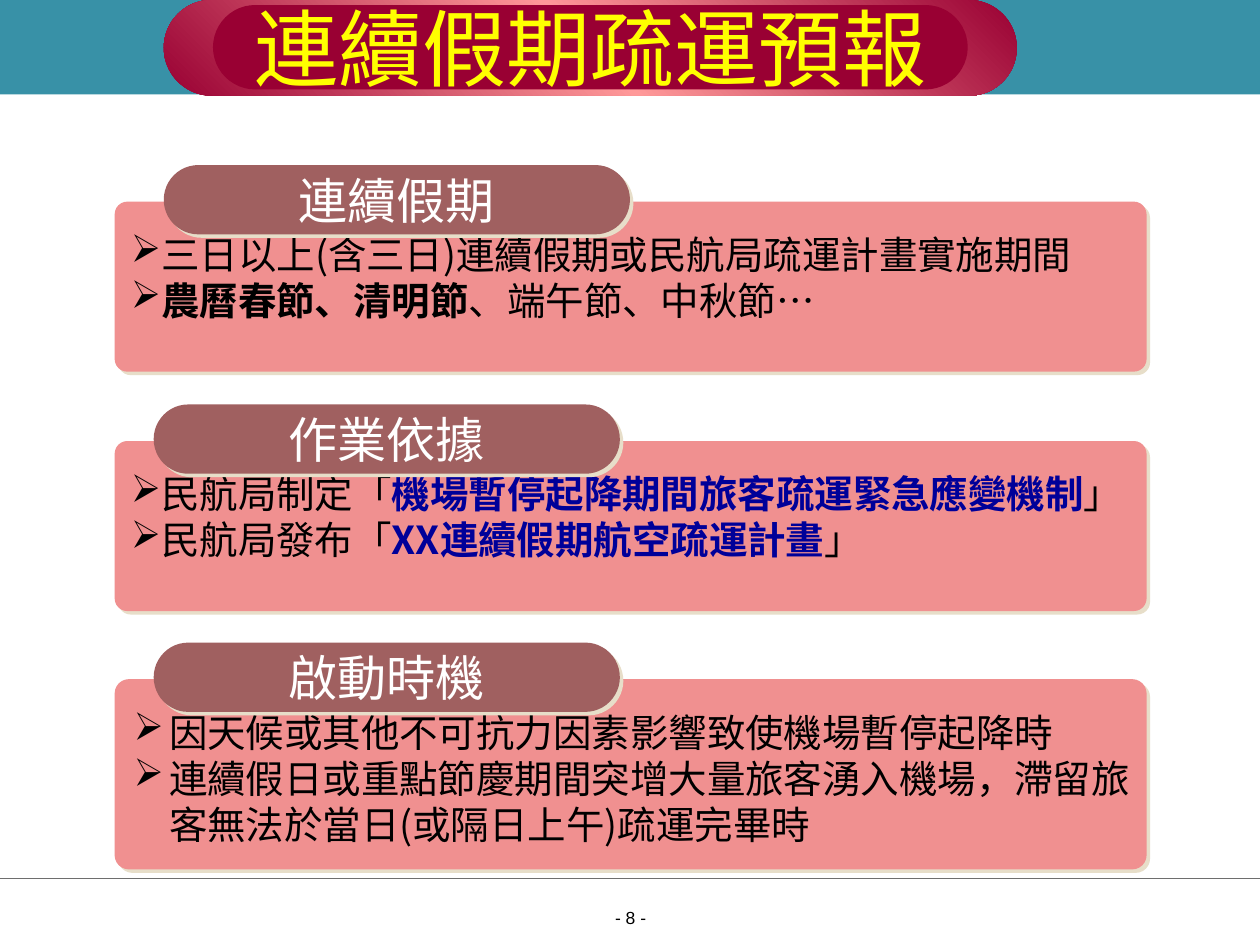
import pptx
import pptx.dml.color
import pptx.enum.shapes
import pptx.enum.text
import pptx.oxml
import pptx.oxml.ns
import pptx.util
from pptx.util import Inches

RGBColor = pptx.dml.color.RGBColor
TEAL = RGBColor(0x38, 0x91, 0xA7)
GREY = RGBColor(0x6E, 0x6E, 0x6E)
PINK = RGBColor(0xF0, 0x90, 0x90)
ROSE = RGBColor(0xA0, 0x60, 0x60)
CRIMSON = RGBColor(0x99, 0x00, 0x33)
SALMON = RGBColor(0xFF, 0x99, 0x99)
BEIGE = RGBColor(0xE7, 0xDE, 0xC9)
YELLOW = RGBColor(0xFF, 0xFF, 0x00)
NAVY = RGBColor(0x00, 0x00, 0x99)
BLACK = RGBColor(0x00, 0x00, 0x00)
WHITE = RGBColor(0xFF, 0xFF, 0xFF)

CJK = "Noto Sans CJK SC"
SHAPE = pptx.enum.shapes.MSO_SHAPE
ALIGN = pptx.enum.text.PP_ALIGN
ANCHOR = pptx.enum.text.MSO_ANCHOR
NAMESPACE = pptx.oxml.ns.nsdecls("a")

# Each section: label, label left, label font, top, height, hanging, paragraphs;
# a paragraph is a list of (text, bold, colour).
SECTIONS = [
    ("連續假期", 1.3, "Arial", 1.6, 1.35, False, [
        [("三日以上(含三日)連續假期或民航局疏運計畫實施期間", False, BLACK)],
        [("農曆春節、清明節", True, BLACK), ("、端午節、中秋節…", False, BLACK)],
    ]),
    ("作業依據", 1.22, "Arial", 3.5, 1.35, False, [
        [("民航局制定「", False, BLACK),
         ("機場暫停起降期間旅客疏運緊急應變機制", True, NAVY),
         ("」", False, BLACK)],
        [("民航局發布「", False, BLACK),
         ("XX連續假期航空疏運計畫", True, NAVY),
         ("」", False, BLACK)],
    ]),
    ("啟動時機", 1.22, CJK, 5.39, 1.51, True, [
        [("因天候或其他不可抗力因素影響致使機場暫停起降時", False, BLACK)],
        [("連續假日或重點節慶期間突增大量旅客湧入機場，"
          "滯留旅客無法於當日(或隔日上午)疏運完畢時", False, BLACK)],
    ]),
]


def add_run(paragraph, text, size, color, font=CJK, bold=False):
    run = paragraph.add_run()
    run.text = text
    run.font.size = pptx.util.Pt(size)
    run.font.bold = bold
    run.font.color.rgb = color
    run.font.name = font
    latin = run.font._element.find(pptx.oxml.ns.qn("a:latin"))
    latin.addnext(pptx.oxml.parse_xml(f'<a:ea {NAMESPACE} typeface="{font}"/>'))


def write_centred(shape, text, **text_format):
    """Write one unwrapped line in the middle of a shape."""
    frame = shape.text_frame
    frame.word_wrap = False
    frame.vertical_anchor = ANCHOR.MIDDLE
    paragraph = frame.paragraphs[0]
    paragraph.alignment = ALIGN.CENTER
    add_run(paragraph, text, **text_format)


def add_box(shapes, left, top, width, height, fill, corner=None):
    """Add a plain rectangle, or a rounded one when corner is given."""
    kind = SHAPE.RECTANGLE if corner is None else SHAPE.ROUNDED_RECTANGLE
    box = shapes.add_shape(kind, Inches(left), Inches(top), Inches(width), Inches(height))
    if corner is not None:
        box.adjustments[0] = corner
    box.shadow.inherit = False
    box.fill.solid()
    box.fill.fore_color.rgb = fill
    box.line.fill.background()
    return box


def add_hard_shadow(shape):
    effects = shape._element.spPr.find(pptx.oxml.ns.qn("a:effectLst"))
    effects.append(pptx.oxml.parse_xml(
        f'<a:outerShdw {NAMESPACE} dist="35560" dir="2700000" algn="ctr" rotWithShape="0">'
        f'<a:srgbClr val="{BEIGE}"/></a:outerShdw>'))


def set_gradient(shape, colors, angle):
    """Replace the solid fill by evenly spaced colours along an angle."""
    step = 100000 // (len(colors) - 1)
    stops = "".join(f'<a:gs pos="{index * step}"><a:srgbClr val="{color}"/></a:gs>'
                    for index, color in enumerate(colors))
    solid = shape._element.spPr.find(pptx.oxml.ns.qn("a:solidFill"))
    solid.addnext(pptx.oxml.parse_xml(
        f'<a:gradFill {NAMESPACE} rotWithShape="1"><a:gsLst>{stops}</a:gsLst>'
        f'<a:lin ang="{angle * 60000}" scaled="1"/></a:gradFill>'))
    shape._element.spPr.remove(solid)


def add_bullet(paragraph, hanging):
    properties = paragraph._p.get_or_add_pPr()
    properties.set("marL", str(Inches(0.3) if hanging else 0))
    properties.set("indent", str(Inches(-0.28) if hanging else 0))
    properties.append(pptx.oxml.parse_xml(f'<a:buChar {NAMESPACE} char="➢"/>'))


def add_section(shapes, label, label_left, label_font, top, height, hanging, paragraphs):
    panel = add_box(shapes, 0.91, top, 8.19, height, PINK, corner=0.075)
    add_hard_shadow(panel)
    frame = panel.text_frame
    frame.word_wrap = True
    frame.vertical_anchor = ANCHOR.TOP
    frame.margin_top = Inches(0.2)
    for index, runs in enumerate(paragraphs):
        paragraph = frame.add_paragraph() if index else frame.paragraphs[0]
        paragraph.alignment = ALIGN.LEFT
        add_bullet(paragraph, hanging)
        for text, bold, color in runs:
            add_run(paragraph, text, size=22, color=color, bold=bold)

    pill = add_box(shapes, label_left, top - 0.29, 3.7, 0.55, ROSE, corner=0.5)
    add_hard_shadow(pill)
    write_centred(pill, label, size=28, color=WHITE, font=label_font)


def add_title(shapes, text):
    rim = add_box(shapes, 1.3, 0, 6.77, 0.76, CRIMSON, corner=0.5)
    set_gradient(rim, [CRIMSON, SALMON, CRIMSON], 315)
    face = add_box(shapes, 1.69, 0.04, 5.99, 0.67, CRIMSON, corner=0.5)
    write_centred(face, text, size=48, color=YELLOW)


def add_footer(shapes, text):
    rule = shapes.add_connector(pptx.enum.shapes.MSO_CONNECTOR.STRAIGHT,
                                Inches(0), Inches(6.97), Inches(10), Inches(6.97))
    rule.line.color.rgb = GREY
    rule.line.width = pptx.util.Pt(0.5)
    rule._element.spPr.append(pptx.oxml.parse_xml(f"<a:effectLst {NAMESPACE}/>"))
    number = shapes.add_textbox(Inches(4.48), Inches(7.16), Inches(1.05), Inches(0.24))
    frame = number.text_frame
    frame.margin_left = frame.margin_right = frame.margin_top = frame.margin_bottom = 0
    write_centred(number, text, size=10, color=BLACK, font="Arial")
    frame.word_wrap = True


def main():
    presentation = pptx.Presentation()
    presentation.slide_width = Inches(10)
    presentation.slide_height = Inches(7.5)
    slide = presentation.slides.add_slide(presentation.slide_layouts[6])
    add_footer(slide.shapes, "- 8 -")
    add_box(slide.shapes, 0, 0, 10, 0.75, TEAL)
    sections = slide.shapes.add_group_shape()
    for section in SECTIONS:
        add_section(sections.shapes, *section)
    title = slide.shapes.add_group_shape()
    add_title(title.shapes, "連續假期疏運預報")
    presentation.save("out.pptx")


if __name__ == "__main__":
    main()
